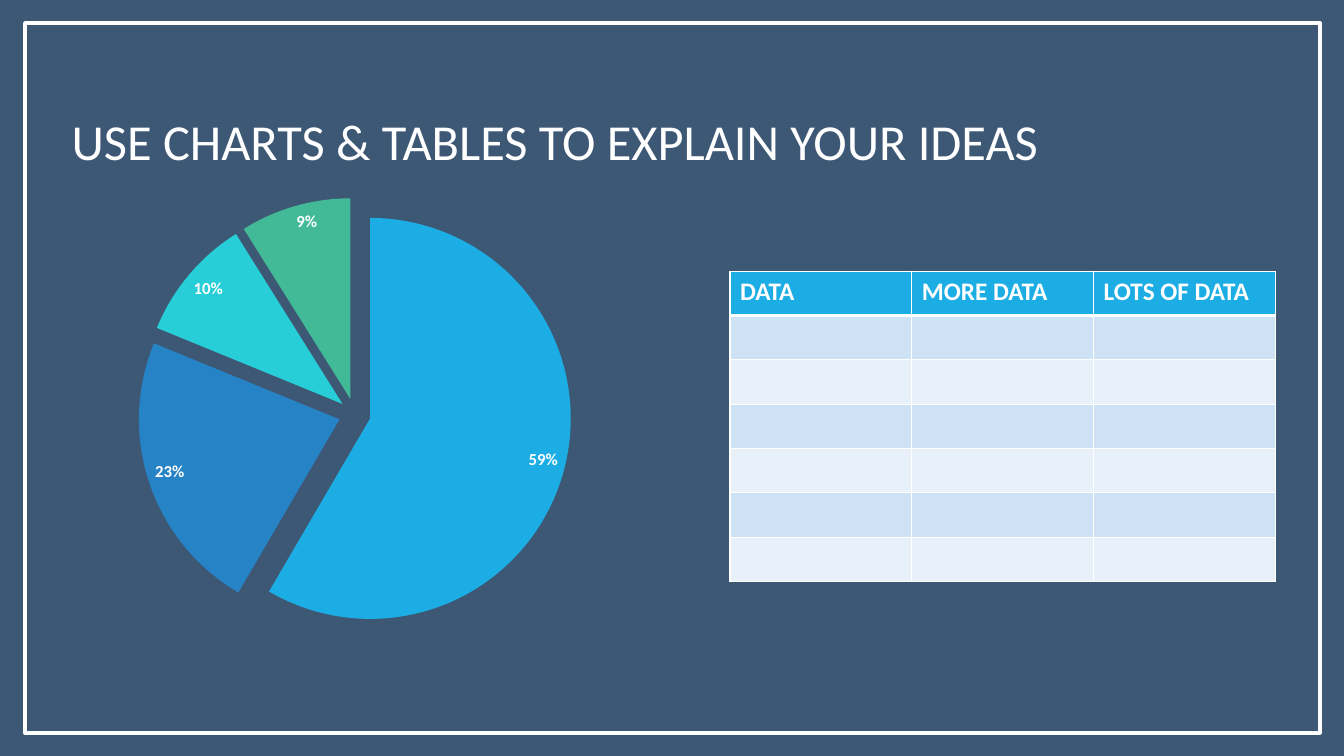
from lxml import etree
from pptx import Presentation
from pptx.chart.data import CategoryChartData
from pptx.dml.color import RGBColor
from pptx.enum.chart import XL_CHART_TYPE, XL_LABEL_POSITION
from pptx.enum.shapes import MSO_SHAPE
from pptx.enum.text import MSO_ANCHOR, MSO_AUTO_SIZE, PP_ALIGN
from pptx.oxml import parse_xml
from pptx.oxml.ns import nsdecls, qn
from pptx.util import Inches, Pt

RECT = MSO_SHAPE.RECTANGLE
PIE = XL_CHART_TYPE.PIE
IN_END = XL_LABEL_POSITION.INSIDE_END
BOTTOM = MSO_ANCHOR.BOTTOM
NO_FIT = MSO_AUTO_SIZE.NONE
LEFT = PP_ALIGN.LEFT

WIDE, HIGH = 13.33, 7.5
FONT = "Calibri"
HEX = {"navy": "294667", "white": "FFFFFF", "black": "000000",
       "sky": "1CADE4", "blue": "2683C6", "aqua": "27CED7", "green": "42BA97",
       "band": "CDE3F5", "pale": "E8F1FA"}
SLICES = [(59, "sky"), (23, "blue"), (10, "aqua"), (9, "green")]
HEADS = ["DATA", "MORE DATA", "LOTS OF DATA"]
ROWS = 7


def tint(name):
    return RGBColor.from_string(HEX[name])


def style(font, color, **form):
    for key, val in {"name": FONT, **form}.items():
        setattr(font, key, val)
    font.color.rgb = tint(color)


def paint(part, name):
    part.fill.solid()
    part.fill.fore_color.rgb = tint(name)


def panel(slide, box):
    """Add a plain rectangle behind the title."""
    shape = slide.shapes.add_shape(RECT, *map(Inches, box))
    shape.shadow.inherit = False
    slide.shapes.title._element.addprevious(shape._element)
    return shape


def add_back(slide, box):
    # Translucent navy wash over the white page
    wash = panel(slide, box)
    paint(wash, "navy")
    wash.line.fill.background()
    clr = wash._element.spPr.find(".//" + qn("a:srgbClr"))
    etree.SubElement(clr, qn("a:alpha"), val="90000")

    # White frame
    x, y, w, h = box
    frame = panel(slide, (x + 0.25, y + 0.23, w - 0.49, h - 0.46))
    frame.fill.background()
    frame.line.color.rgb = tint("white")
    frame.line.width = Pt(3)


def add_title(slide, box, text):
    title = slide.shapes.title
    title.left, title.top, title.width, title.height = map(Inches, box)
    body = title.text_frame
    form = {"text": text, "word_wrap": True, "auto_size": NO_FIT,
            "vertical_anchor": BOTTOM}
    form.update({"margin_" + side: Inches(0.1)
                 for side in ("left", "top", "right", "bottom")})
    for key, val in form.items():
        setattr(body, key, val)
    para = body.paragraphs[0]
    para.alignment = LEFT
    para.line_spacing = 0.9
    style(para.runs[0].font, "white", size=Pt(36))


def add_pie(slide, box):
    data = CategoryChartData()
    data.categories = [str(n + 1) for n in range(len(SLICES))]
    data.add_series("Series 1", [val for val, _ in SLICES])
    chart = slide.shapes.add_chart(PIE, *map(Inches, box), data).chart
    chart.has_legend = chart.has_title = False
    style(chart.font, "black", size=Pt(10))
    plot = chart.plots[0]
    plot.vary_by_categories = True

    # Slices, pulled apart
    series = plot.series[0]
    for n, (_, name) in enumerate(SLICES):
        point = series.points[n].format
        paint(point, name)
        point.line.fill.background()
    first = series._element.find(qn("c:dPt"))
    first.addprevious(parse_xml(f'<c:explosion {nsdecls("c")} val="8"/>'))
    for dot in series._element.findall(qn("c:dPt")):
        dot.find(qn("c:spPr")).addprevious(
            parse_xml(f'<c:explosion {nsdecls("c")} val="8"/>'))

    # Labels
    plot.has_data_labels = True
    form = {"show_value": True, "number_format": '0"%"',
            "number_format_is_linked": False, "position": IN_END}
    for key, val in form.items():
        setattr(plot.data_labels, key, val)
    style(plot.data_labels.font, "white", size=Pt(12), bold=True)

    # Square plot area, centred in the box
    tall = 0.93
    wide = tall * box[3] / box[2]
    spots = {"x": (1 - wide) / 2, "y": (1 - tall) / 2, "w": wide, "h": tall}
    parts = "".join(f'<c:{key} val="{val:.3f}"/>' for key, val in spots.items())
    area = chart._chartSpace.find(".//" + qn("c:plotArea"))
    for old in area.findall(qn("c:layout")):
        area.remove(old)
    area.insert(0, parse_xml(
        f'<c:layout {nsdecls("c")}><c:manualLayout><c:layoutTarget val="inner"/>'
        f'<c:xMode val="edge"/><c:yMode val="edge"/>{parts}'
        '</c:manualLayout></c:layout>'))


def edge(cell, low):
    """Draw white borders; low is the bottom width in points."""
    props = cell._tc.get_or_add_tcPr()
    for n, side in enumerate("LRTB"):
        width = Pt(low if side == "B" else 1)
        props.insert(n, parse_xml(
            f'<a:ln{side} {nsdecls("a")} w="{width}"><a:solidFill>'
            f'<a:srgbClr val="{HEX["white"]}"/></a:solidFill></a:ln{side}>'))


def add_grid(slide, box):
    table = slide.shapes.add_table(ROWS, len(HEADS), *map(Inches, box)).table
    for row in range(ROWS):
        for col, head in enumerate(HEADS):
            cell = table.cell(row, col)
            para = cell.text_frame.paragraphs[0]
            if row == 0:
                para.text = head
                style(para.runs[0].font, "white", size=Pt(18), bold=True)
                paint(cell, "sky")
            else:
                para.font.size = Pt(18)
                paint(cell, "band" if row % 2 else "pale")
            edge(cell, 1 if row else 3)
        # The header rule also tops the first body row
            if row == 1:
                cell._tc.tcPr.find(qn("a:lnT")).set("w", str(Pt(3)))


def main():
    deck = Presentation()
    deck.slide_width, deck.slide_height = Inches(WIDE), Inches(HIGH)
    slide = deck.slides.add_slide(deck.slide_layouts[5])
    add_back(slide, (0, 0, WIDE, HIGH))
    add_title(slide, (0.61, 0.91, 12.04, 0.89),
              "USE CHARTS & TABLES TO EXPLAIN YOUR IDEAS")
    add_pie(slide, (0.12, 1.8, 6.79, 4.62))
    add_grid(slide, (7.24, 2.69, 5.41, 3.08))
    deck.save("out.pptx")


if __name__ == "__main__":
    main()
